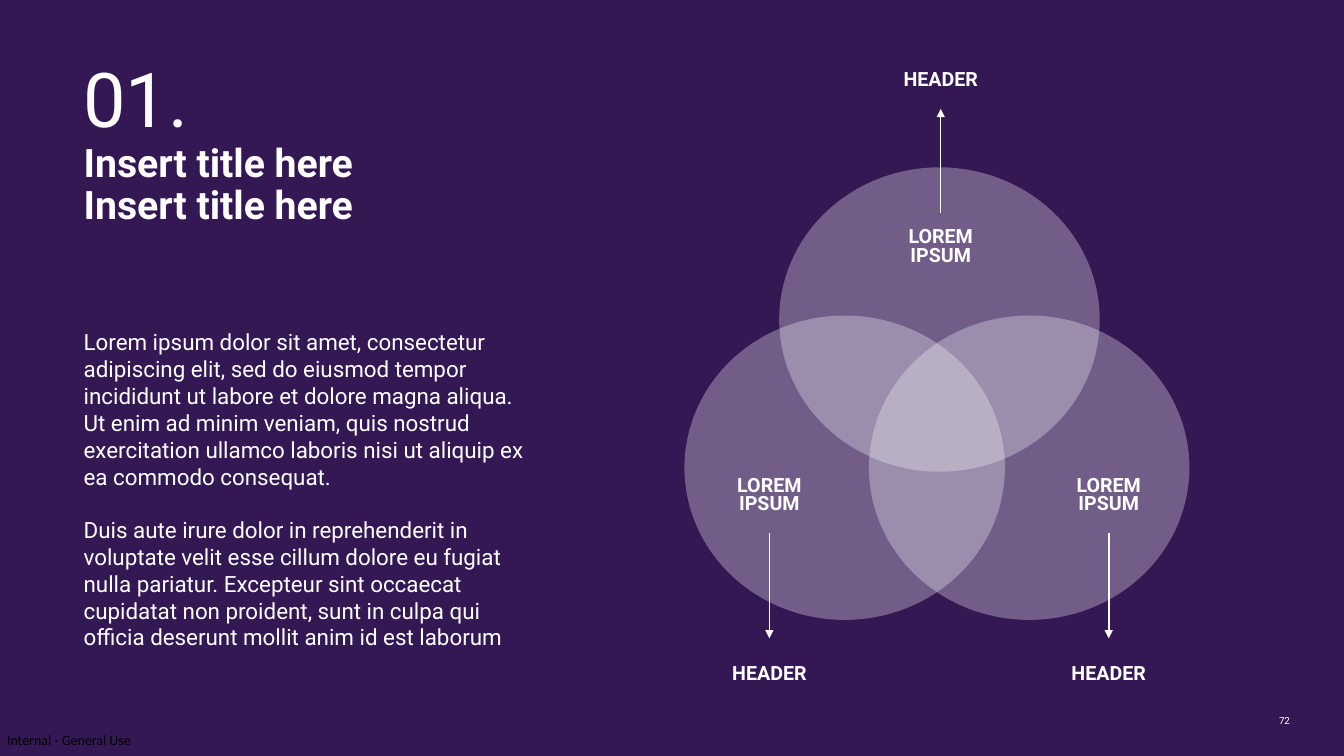
import pptx
import pptx.util
import pptx.dml.color
import pptx.enum.shapes
import pptx.enum.text
import pptx.oxml
import pptx.oxml.ns

COLOURS = {"background": "341854", "light": "FFFFFF", "marking": "000000"}
FONT = "Roboto"
ALIGN = pptx.enum.text.PP_ALIGN

# Grid of 160 columns by 90 rows on the slide
WIDTH, HEIGHT = pptx.util.Inches(13.33), pptx.util.Inches(7.5)
COLUMNS, ROWS = 160, 90

CIRCLE = (38.16, 36.24)
TOPIC = (15.36, 5.52)
HEADER = (22, 3.6)

# Circle corner, centre column of its texts, topic top, arrow ends, header top
SETS = [
    ((92.76, 19.92), 112, 26.64, (25.32, 12.96), 7.92),
    ((81.48, 37.56), 91.6, 56.28, (63.5, 76), 78.72),
    ((103.44, 37.56), 132, 56.28, (63.5, 76), 78.72),
]

PARAGRAPHS = [
    "Lorem ipsum dolor sit amet, consectetur adipiscing elit, sed do eiusmod "
    "tempor incididunt ut labore et dolore magna aliqua. Ut enim ad minim veniam, "
    "quis nostrud exercitation ullamco laboris nisi ut aliquip ex ea commodo consequat.",
    "Duis aute irure dolor in reprehenderit in voluptate velit esse cillum dolore "
    "eu fugiat nulla pariatur. Excepteur sint occaecat cupidatat non proident, sunt "
    "in culpa qui officia deserunt mollit anim id est laborum",
]


def col(count):
    return round(WIDTH * count / COLUMNS)


def row(count):
    return round(HEIGHT * count / ROWS)


def area(left, top, width, height):
    return col(left), row(top), col(width), row(height)


def rgb(name):
    return pptx.dml.color.RGBColor.from_string(COLOURS[name])


def write(holder, lines, size, colour="light", font=FONT, bold=False,
          align=ALIGN.LEFT, spacing=1.0, gap=0, inset=None, wrap=True):
    """Fill a text box or placeholder with one paragraph per line."""
    frame = holder.text_frame
    frame.word_wrap = wrap
    frame.auto_size = pptx.enum.text.MSO_AUTO_SIZE.NONE
    frame.vertical_anchor = pptx.enum.text.MSO_ANCHOR.TOP
    if inset is not None:
        frame.margin_left = frame.margin_right = pptx.util.Inches(inset)
        frame.margin_top = frame.margin_bottom = pptx.util.Inches(inset)
    for index, line in enumerate(lines):
        paragraph = frame.paragraphs[0] if index == 0 else frame.add_paragraph()
        properties = paragraph._p.get_or_add_pPr()
        properties.set("marL", "0")
        properties.set("indent", "0")
        properties.append(pptx.oxml.parse_xml(
            f"<a:buNone {pptx.oxml.ns.nsdecls('a')}/>"))
        paragraph.alignment = align
        paragraph.line_spacing = spacing
        paragraph.space_before = pptx.util.Pt(gap if index else 0)
        run = paragraph.add_run()
        run.text = line
        run.font.name = font
        run.font.size = pptx.util.Pt(size)
        run.font.bold = bold
        run.font.color.rgb = rgb(colour)


def add_text(slide, box, text, size, **style):
    write(slide.shapes.add_textbox(*area(*box)), [text], size, **style)


def fill_placeholder(holder, box, lines, size, **style):
    holder.left, holder.top, holder.width, holder.height = area(*box)
    write(holder, lines, size, **style)


def add_circle(slide, corner):
    circle = slide.shapes.add_shape(
        pptx.enum.shapes.MSO_SHAPE.OVAL, *area(*corner, *CIRCLE))
    circle.shadow.inherit = False
    circle.line.fill.background()
    circle.fill.solid()
    circle.fill.fore_color.rgb = rgb("light")
    tint = circle._element.spPr.find(".//" + pptx.oxml.ns.qn("a:srgbClr"))
    tint.append(pptx.oxml.parse_xml(
        f'<a:alpha {pptx.oxml.ns.nsdecls("a")} val="30000"/>'))


def add_arrow(slide, axis, start, end):
    arrow = slide.shapes.add_connector(
        pptx.enum.shapes.MSO_CONNECTOR.STRAIGHT,
        col(axis), row(start), col(axis), row(end))
    arrow.line.color.rgb = rgb("light")
    arrow.line.width = pptx.util.Pt(1)
    namespace = pptx.oxml.ns.nsdecls("a")
    arrow.line._get_or_add_ln().append(
        pptx.oxml.parse_xml(f'<a:tailEnd {namespace} type="triangle"/>'))
    arrow._element.spPr.append(pptx.oxml.parse_xml(f"<a:effectLst {namespace}/>"))


def add_label(slide, axis, top, size, text):
    width, height = size
    add_text(slide, (axis - width / 2, top, width, height), text, 14, bold=True,
             align=ALIGN.CENTER, spacing=pptx.util.Pt(13.3))


def main():
    deck = pptx.Presentation()
    deck.slide_width, deck.slide_height = WIDTH, HEIGHT
    slide = deck.slides.add_slide(deck.slide_layouts[1])
    slide.background.fill.solid()
    slide.background.fill.fore_color.rgb = rgb("background")

    # Number, title and body on the left
    add_text(slide, (8.76, 6.84, 23.28, 12.36), "01.", 54, spacing=0.9)
    fill_placeholder(slide.shapes.title, (8.76, 16.44, 51.36, 17.76),
                     ["Insert title here"] * 2, 28, bold=True, spacing=0.9)
    fill_placeholder(slide.placeholders[1], (8.4, 37.56, 55.92, 42),
                     PARAGRAPHS, 16, gap=18.75, inset=0.13)

    # Overlapping circles, then their labels and arrows
    for corner, *_ in SETS:
        add_circle(slide, corner)
    for _, axis, topic_top, arrow_ends, header_top in SETS:
        add_label(slide, axis, topic_top, TOPIC, "LOREM IPSUM")
        add_arrow(slide, axis, *arrow_ends)
        add_label(slide, axis, header_top, HEADER, "HEADER")

    # Marking and page number
    add_text(slide, (0.84, 87.12, 15.24, 2.04), "Internal - General Use", 10,
             colour="marking", font="Calibri", inset=0, wrap=False)
    add_text(slide, (151.08, 84.48, 5.28, 3), "72", 7)

    deck.save("out.pptx")


if __name__ == "__main__":
    main()
